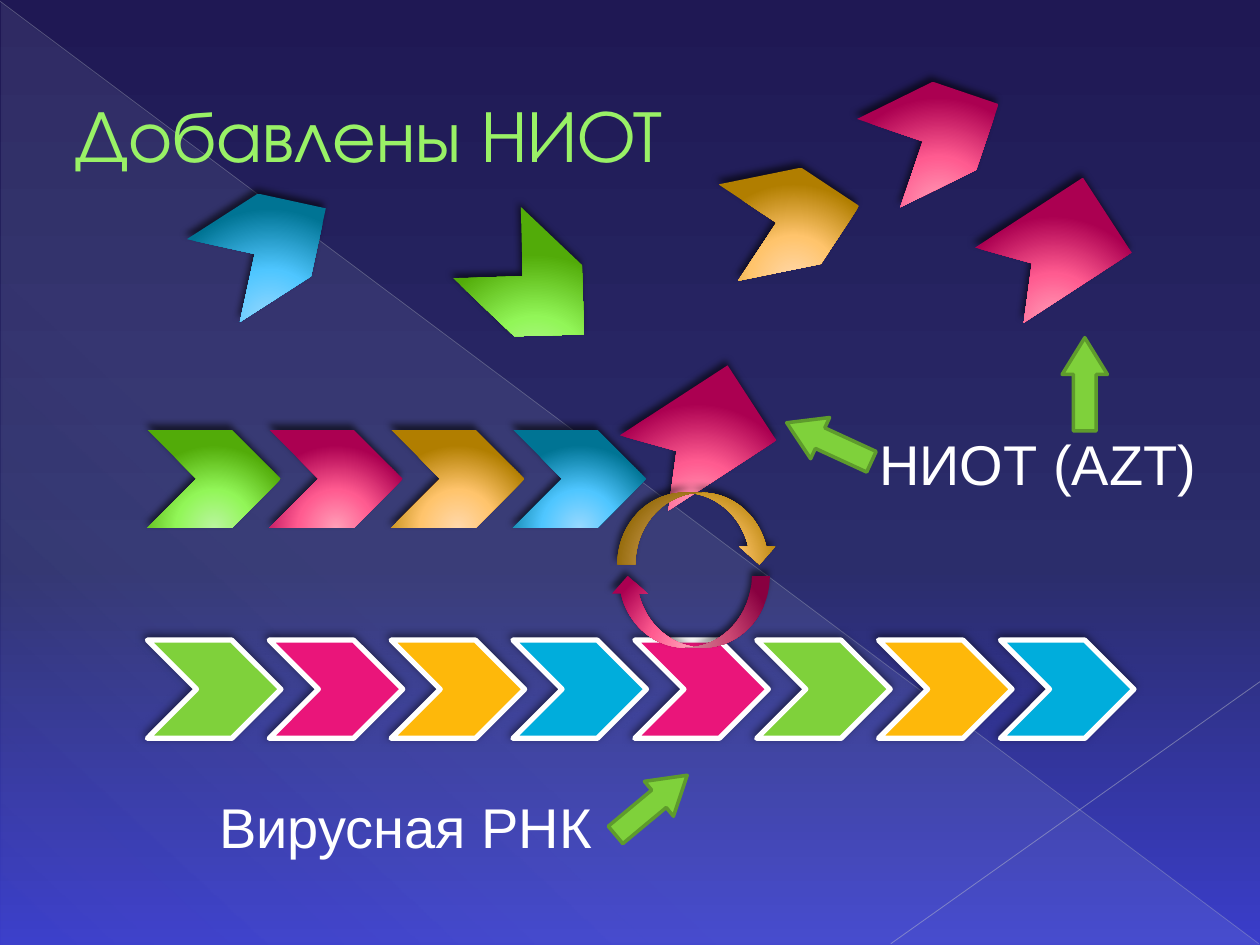
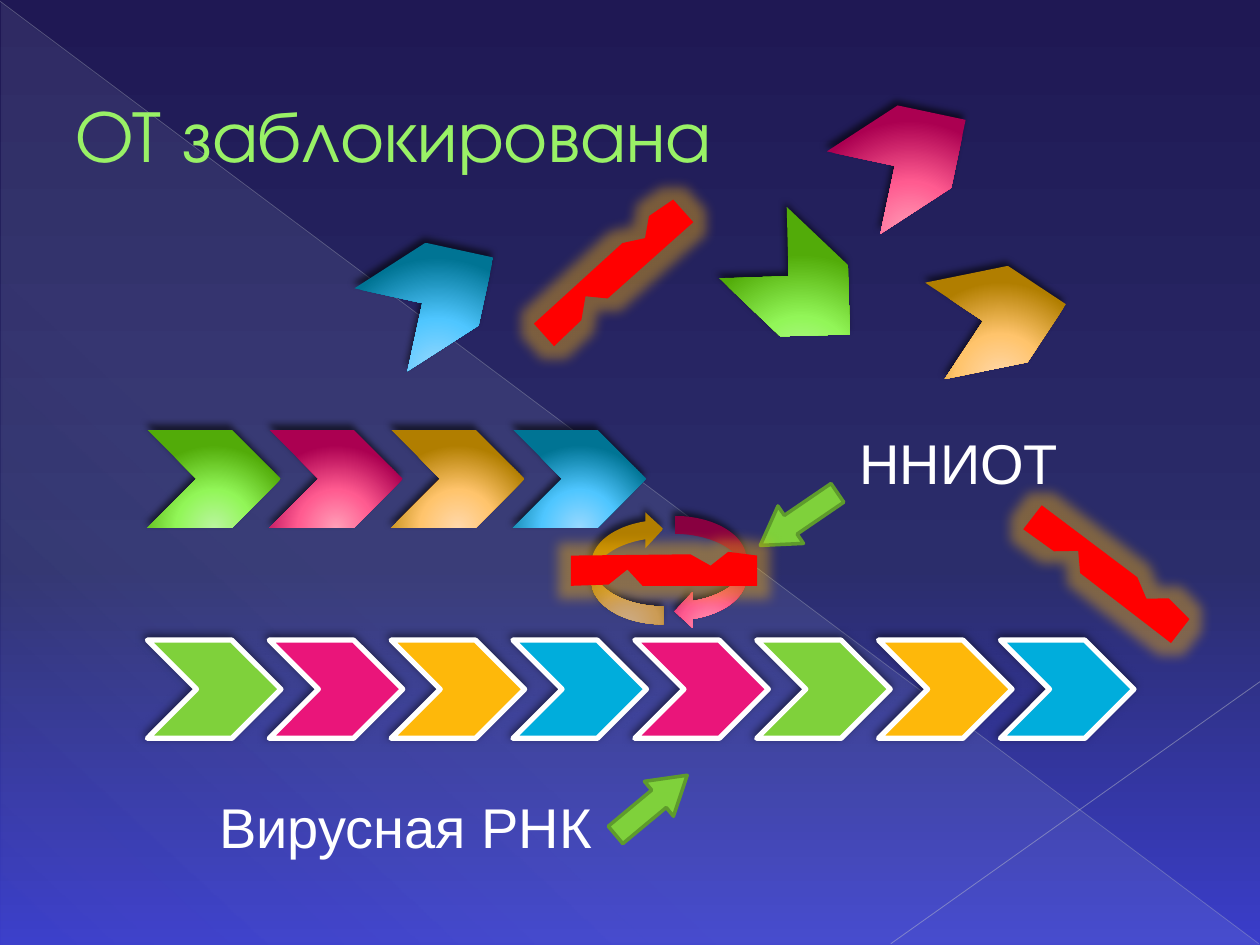
from pptx import Presentation
from pptx import oxml
from pptx import util as u
from pptx.dml import color as dml
from pptx.enum import shapes, text
from pptx.oxml import ns

COLORS = {
    "title": "99F166", "title_edge": "589129", "caption": "FFFFFF",
    "green": "7FD13B", "pink": "EA157A", "amber": "FEB80A", "blue": "00ADDC",
    "arrow_edge": "5E9B2C", "blocker": "FF0000", "shadow": "000000",
    "beam": "D6ECFF", "long_line": "B7BCC5", "short_line": "BFC3CB",
    "night": "1F1854", "dusk": "2B2D6B", "dawn": "3A3DCA",
}
# Glossy tints: light, middle and dark stops
GLOSS = {
    "green": ("BAF59F", "92F658", "52AB09"),
    "pink": ("FF9FB8", "FF5B90", "AB0051"),
    "amber": ("FFD8AB", "FFC46C", "B17E00"),
    "blue": ("98D8FE", "4FC6FF", "007494"),
}
A = ns.nsdecls("a")
SHADOW = (f'<a:outerShdw {A} blurRad="%d" dist="%d" dir="14700000" algn="tl" rotWithShape="0">'
          f'<a:srgbClr val="{COLORS["shadow"]}"><a:alpha val="%d"/></a:srgbClr></a:outerShdw>')
GLOSS_SHADOW = SHADOW % (u.Pt(4), u.Pt(3), 60000)
FLAT_SHADOW = SHADOW % (u.Pt(5), u.Pt(2), 50000)
GLOW = (f'<a:glow {A} rad="{u.Pt(14)}"><a:srgbClr val="{COLORS["amber"]}">'
        '<a:alpha val="40000"/></a:srgbClr></a:glow>')
ROUND_SHADE = ('<a:path path="circle"><a:fillToRect l="50000" t="155000" r="50000" b="-55000"/>'
               '</a:path>')
CHEVRON = shapes.MSO_SHAPE.CHEVRON
CHEVRON_SIZE = (1.06, 0.78)


def gradient(stops, shade):
    """Gradient fill from (percent, colour, opacity) stops."""
    marks = "".join(
        f'<a:gs pos="{place * 1000}"><a:srgbClr val="{tone}">'
        f'<a:alpha val="{opacity * 1000}"/></a:srgbClr></a:gs>'
        for place, tone, opacity in stops)
    return oxml.parse_xml(
        f'<a:gradFill {A} rotWithShape="1"><a:gsLst>{marks}</a:gsLst>{shade}</a:gradFill>')


def dress(shape, fill, effect=None, edge=None, width=0, rotation=0):
    """Fill is a hex colour or a gradient element."""
    shape.rotation = rotation
    shape.shadow.inherit = False
    properties = shape.element.spPr
    shape.fill.solid()
    if isinstance(fill, str):
        shape.fill.fore_color.rgb = dml.RGBColor.from_string(fill)
    else:
        properties.replace(properties.find(ns.qn("a:solidFill")), fill)
    if edge:
        shape.line.color.rgb = dml.RGBColor.from_string(edge)
        shape.line.width = u.Pt(width)
    else:
        shape.line.fill.background()
    if effect:
        properties.find(ns.qn("a:effectLst")).append(oxml.parse_xml(effect))


# What each slide shows; loose pieces are (tint, left, top, rotation)
SLIDES = [
    {
        "title": "Добавлены НИОТ",
        "captions": [("НИОТ (AZT)", 6.88, 3.36, 2.81)],
        "pointers": [(6.21, 3.33, 204.7), (8.24, 2.87, 270)],
        "loose": [("blue", 1.61, 1.55, 327.3), ("green", 3.72, 1.9, 43.5),
                  ("amber", 5.77, 1.35, 348.5), ("pink", 6.92, 0.67, 333.8)],
        "cycle": [("pink", 4.84, 4.57, 1.27, 0), ("amber", 4.9, 3.91, 1.27, 180)],
        "analogues": [(5.03, 3.12), (7.85, 1.63)],
        "blockers": [],
    },
    {
        "title": "ОТ заблокирована",
        "captions": [("ННИОТ", 6.72, 3.35, 2.42)],
        "pointers": [(5.97, 3.94, 145.7)],
        "loose": [("pink", 6.69, 0.85, 327), ("blue", 2.94, 1.94, 327.3),
                  ("green", 5.83, 1.9, 43.5), ("amber", 7.41, 2.13, 348.5)],
        "cycle": [("pink", 5.19, 4.26, 0.9, 270), ("amber", 4.53, 4.22, 0.9, 90)],
        "analogues": [],
        "blockers": [(4.53, 4.38, 0), (8.05, 4.41, 37.6), (4.12, 2.02, 318.3)],
    },
]
SHARED_CAPTION = ("Вирусная РНК", 1.64, 6.24, 3.36)
SHARED_POINTER = (4.8, 6.21, 320.2)
DNA = ["green", "pink", "amber", "blue"]
RNA = DNA + ["pink", "green", "amber", "blue"]
STRAND_LEFT, STRAND_STEP = 1.17, 6.77 / 7

ANALOGUE = [(0, 0), (1.02, 0), (1.02, 0.71), (0, 0.71), (0.31, 0.35)]
BLOCKER = [(0, 0.27), (0, 0.03), (0.95, 0.02), (1.11, 0.11), (1.25, 0), (1.48, 0.03),
           (1.48, 0.27), (0.57, 0.27), (0.45, 0.14), (0.3, 0.26)]

deck = Presentation()
deck.slide_width, deck.slide_height = u.Inches(10), u.Inches(7.5)
layout = deck.slide_layouts[5]

# Shared background
master = deck.slide_master
master.background.fill.solid()
backdrop = master.element.xpath("./p:cSld/p:bg/p:bgPr")[0]
backdrop.replace(backdrop[0], gradient(
    [(0, COLORS["night"], 100), (60, COLORS["dusk"], 100), (100, COLORS["dawn"], 100)],
    '<a:lin ang="5400000" scaled="0"/>'))

pages = [deck.slides.add_slide(layout) for _ in SLIDES]

# Shared beam and thin lines, moved onto the layout
beam = pages[0].shapes.add_shape(
    shapes.MSO_SHAPE.RIGHT_TRIANGLE, *map(u.Inches, (0.01, 0.02, 9.99, 7.48)))
dress(beam, gradient([(0, COLORS["beam"], 10), (70, COLORS["beam"], 8), (100, COLORS["beam"], 1)],
                     '<a:lin ang="7980000" scaled="0"/>'))
decor = [beam]
for ends, tone, width, opacity in [
        ((0, 0.01, 9.99, 7.49), "long_line", 0.39, 35),
        ((10, 5.41, 7.07, 7.49), "short_line", 0.47, 45)]:
    line = pages[0].shapes.add_connector(shapes.MSO_CONNECTOR.STRAIGHT, *map(u.Inches, ends))
    line.line.color.rgb = dml.RGBColor.from_string(COLORS[tone])
    line.line.width = u.Pt(width)
    properties = line.element.spPr
    properties.xpath(".//a:srgbClr")[0].append(
        oxml.parse_xml(f'<a:alpha {A} val="{opacity * 1000}"/>'))
    properties.append(oxml.parse_xml(f"<a:effectLst {A}/>"))
    decor.append(line)
for order, shape in enumerate(decor):
    shape.element.xpath(".//p:cNvPr")[0].set("id", str(100 + order))
    layout.shapes.element.insert(2 + order, shape.element)

for page, content in zip(pages, SLIDES):
    # Title
    box = page.shapes.title
    box.left, box.top, box.width, box.height = map(u.Inches, (0.5, 0.29, 9, 1.53))
    frame = box.text_frame
    frame.vertical_anchor = text.MSO_ANCHOR.MIDDLE
    frame.auto_size = text.MSO_AUTO_SIZE.NONE
    para = frame.paragraphs[0]
    para.alignment = text.PP_ALIGN.LEFT
    indent = para._p.get_or_add_pPr()
    indent.set("marL", str(u.Inches(0.53)))
    indent.set("indent", str(u.Inches(-0.53)))
    span = para.add_run()
    span.text = content["title"]
    span.font.size = u.Pt(42)
    span.font.name = "TeX Gyre Adventor"
    span.font.color.rgb = dml.RGBColor.from_string(COLORS["title"])
    span.font._element.insert(0, oxml.parse_xml(
        f'<a:ln {A} w="{u.Pt(0.5)}"><a:solidFill><a:srgbClr val="{COLORS["title_edge"]}"/>'
        '</a:solidFill></a:ln>'))

    # Nucleoside analogues and blockers as outlines; blockers go to the front below
    outlines = [(ANALOGUE, left, top, 327) for left, top in content["analogues"]]
    outlines += [(BLOCKER, *place) for place in content["blockers"]]
    blockers = []
    for points, left, top, rotation in outlines:
        corners = [(u.Inches(left + x), u.Inches(top + y)) for x, y in points]
        builder = page.shapes.build_freeform(*corners[0])
        builder.add_line_segments(corners[1:], close=True)
        shape = builder.convert_to_shape()
        if points is BLOCKER:
            dress(shape, COLORS["blocker"], GLOW, rotation=rotation)
            blockers.append(shape)
        else:
            light, middle, dark = GLOSS["pink"]
            dress(shape, gradient([(0, light, 100), (46, middle, 100), (100, dark, 100)],
                                  ROUND_SHADE), GLOSS_SHADOW, rotation=rotation)

    # Viral RNA strand
    for index, tint in enumerate(RNA):
        link = page.shapes.add_shape(CHEVRON, *map(
            u.Inches, (STRAND_LEFT + index * STRAND_STEP, 5.08, *CHEVRON_SIZE)))
        dress(link, COLORS[tint], FLAT_SHADOW, COLORS["caption"], 3)

    # New strand, loose nucleotides and the enzyme cycle
    glossy = [(CHEVRON, tint, STRAND_LEFT + index * STRAND_STEP, 3.41, *CHEVRON_SIZE, 0)
              for index, tint in enumerate(DNA)]
    glossy += [(CHEVRON, tint, left, top, *CHEVRON_SIZE, rotation)
               for tint, left, top, rotation in content["loose"]]
    glossy += [(shapes.MSO_SHAPE.CURVED_UP_ARROW, tint, left, top, width, 0.57, rotation)
               for tint, left, top, width, rotation in content["cycle"]]
    for preset, tint, left, top, width, height, rotation in glossy:
        shape = page.shapes.add_shape(preset, *map(u.Inches, (left, top, width, height)))
        light, middle, dark = GLOSS[tint]
        dress(shape, gradient([(0, light, 100), (46, middle, 100), (100, dark, 100)],
                              ROUND_SHADE), GLOSS_SHADOW, rotation=rotation)
        if preset != CHEVRON:
            shape.element.spPr.xfrm.set("flipH", "1")

    # Captions
    for wording, left, top, width in [SHARED_CAPTION, *content["captions"]]:
        box = page.shapes.add_textbox(*map(u.Inches, (left, top, width, 0.64)))
        box.text_frame.word_wrap = True
        box.text_frame.auto_size = text.MSO_AUTO_SIZE.SHAPE_TO_FIT_TEXT
        span = box.text_frame.paragraphs[0].add_run()
        span.text = wording
        span.font.size = u.Pt(32)
        span.font.name = "Arial"
        span.font.color.rgb = dml.RGBColor.from_string(COLORS["caption"])

    # Pointers from the captions
    for left, top, rotation in [SHARED_POINTER, *content["pointers"]]:
        pointer = page.shapes.add_shape(
            shapes.MSO_SHAPE.RIGHT_ARROW, *map(u.Inches, (left, top, 0.74, 0.36)))
        pointer.adjustments[1] = 0.81
        dress(pointer, COLORS["green"], edge=COLORS["arrow_edge"], width=2, rotation=rotation)

    for blocker in blockers:
        page.shapes.element.append(blocker.element)

deck.save("out.pptx")
